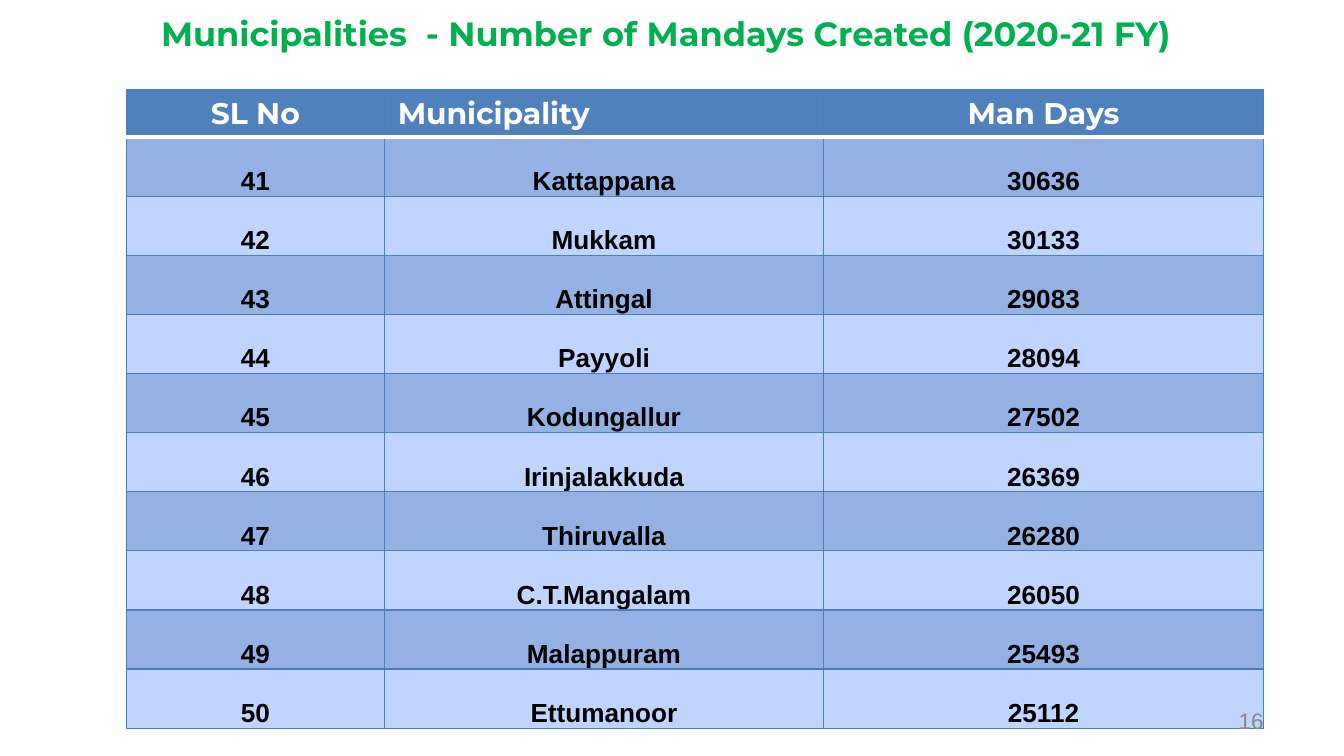
from dataclasses import dataclass

from lxml import etree
from pptx import Presentation
from pptx.dml.color import RGBColor
from pptx.enum.text import MSO_ANCHOR, PP_ALIGN
from pptx.oxml.ns import qn
from pptx.util import Emu, Inches, Pt

LEFT, CENTER, RIGHT = PP_ALIGN.LEFT, PP_ALIGN.CENTER, PP_ALIGN.RIGHT
TOP, MIDDLE, BOTTOM = MSO_ANCHOR.TOP, MSO_ANCHOR.MIDDLE, MSO_ANCHOR.BOTTOM

GRID_UNIT = Inches(0.1)
GRID_COLUMNS, GRID_ROWS = 100, 56.25

HEADER_FILL = "4F81BD"
BAND_FILLS = ("93B1E3", "BFD4FF")
BORDER = "4B7EBC"
WHITE = "FFFFFF"

TABLE_LEFT, TABLE_TOP = 9.4, 6.7
COLUMN_WIDTHS = (19.2, 32.7, 32.7)
HEADER_HEIGHT, BODY_HEIGHT = 3.4, 4.4
HEADINGS = ("SL No", "Municipality", "Man Days")
HEADING_ALIGNMENTS = (CENTER, LEFT, CENTER)
FIRST_NUMBER = 41
MAN_DAYS = {
    "Kattappana": 30636,
    "Mukkam": 30133,
    "Attingal": 29083,
    "Payyoli": 28094,
    "Kodungallur": 27502,
    "Irinjalakkuda": 26369,
    "Thiruvalla": 26280,
    "C.T.Mangalam": 26050,
    "Malappuram": 25493,
    "Ettumanoor": 25112,
}


@dataclass(frozen=True)
class TextStyle:
    font: str
    size: int
    color: str
    bold: bool


@dataclass(frozen=True)
class Label:
    text: str
    left: float
    top: float
    width: float
    height: float
    alignment: PP_ALIGN
    anchor: MSO_ANCHOR
    style: TextStyle


@dataclass(frozen=True)
class CellStyle:
    fill: str
    text: TextStyle
    anchor: MSO_ANCHOR
    insets: tuple[float, float, float, float]
    top_line: tuple[str, float] = (BORDER, 0.75)
    bottom_line: tuple[str, float] = (BORDER, 0.75)


HEADER_TEXT = TextStyle("Montserrat", 16, WHITE, True)
BODY_TEXT = TextStyle("Arial", 14, "000000", True)
BODY_INSETS = (0.01, 0.01, 0.01, 0)
HEADER_RULE = (WHITE, 2)

LABELS = (
    Label("16", 71.7, 52.1, 23.3, 3, RIGHT, MIDDLE,
          TextStyle("Arial", 12, "888888", False)),
    Label("Municipalities  - Number of Mandays Created (2020-21 FY)",
          4.6, 0.5, 89.9, 4.3, CENTER, TOP,
          TextStyle("Montserrat", 18, "00B050", True)),
)


def color(value: str) -> RGBColor:
    return RGBColor.from_string(value)


def grid(units: float) -> Emu:
    return Emu(round(units * GRID_UNIT))


def write(frame, text: str, alignment: PP_ALIGN, style: TextStyle) -> None:
    para = frame.paragraphs[0]
    para.text = text
    para.alignment = alignment
    para.font.name = style.font
    para.font.size = Pt(style.size)
    para.font.bold = style.bold
    para.font.color.rgb = color(style.color)


def draw_label(page, label: Label) -> None:
    box = page.shapes.add_textbox(
        grid(label.left), grid(label.top), grid(label.width), grid(label.height))
    box.text_frame.word_wrap = True
    box.text_frame.vertical_anchor = label.anchor
    write(box.text_frame, label.text, label.alignment, label.style)


def draw_borders(cell, style: CellStyle) -> None:
    side_line = (BORDER, 0.75)
    lines = {"a:lnL": side_line, "a:lnR": side_line,
             "a:lnT": style.top_line, "a:lnB": style.bottom_line}
    properties = cell._tc.get_or_add_tcPr()
    for position, (tag, (line_color, width)) in enumerate(lines.items()):
        line = etree.Element(qn(tag), w=str(Pt(width)))
        fill = etree.SubElement(line, qn("a:solidFill"))
        etree.SubElement(fill, qn("a:srgbClr"), val=line_color)
        properties.insert(position, line)


def draw_cell(cell, text: str, alignment: PP_ALIGN, style: CellStyle) -> None:
    cell.fill.solid()
    cell.fill.fore_color.rgb = color(style.fill)
    cell.vertical_anchor = style.anchor
    (cell.margin_left, cell.margin_top,
     cell.margin_right, cell.margin_bottom) = map(Inches, style.insets)
    write(cell.text_frame, text, alignment, style.text)
    draw_borders(cell, style)


def draw_table(page) -> None:
    row_heights = [HEADER_HEIGHT] + [BODY_HEIGHT] * len(MAN_DAYS)
    table = page.shapes.add_table(
        len(row_heights), len(COLUMN_WIDTHS), grid(TABLE_LEFT), grid(TABLE_TOP),
        grid(sum(COLUMN_WIDTHS)), grid(sum(row_heights))).table
    for column, width in zip(table.columns, COLUMN_WIDTHS):
        column.width = grid(width)
    for row, height in zip(table.rows, row_heights):
        row.height = grid(height)

    header = CellStyle(HEADER_FILL, HEADER_TEXT, TOP, (0.1, 0.04, 0.1, 0.04),
                       bottom_line=HEADER_RULE)
    for cell, text, alignment in zip(table.rows[0].cells, HEADINGS, HEADING_ALIGNMENTS):
        draw_cell(cell, text, alignment, header)

    for index, (municipality, days) in enumerate(MAN_DAYS.items()):
        body = CellStyle(BAND_FILLS[index % 2], BODY_TEXT, BOTTOM, BODY_INSETS,
                         top_line=(BORDER, 0.75) if index else HEADER_RULE)
        values = (FIRST_NUMBER + index, municipality, days)
        for cell, value in zip(table.rows[index + 1].cells, values):
            draw_cell(cell, str(value), CENTER, body)


def main() -> None:
    deck = Presentation()
    deck.slide_width = grid(GRID_COLUMNS)
    deck.slide_height = grid(GRID_ROWS)
    page = deck.slides.add_slide(deck.slide_layouts[6])
    draw_table(page)
    for label in LABELS:
        draw_label(page, label)
    deck.save("out.pptx")


if __name__ == "__main__":
    main()
